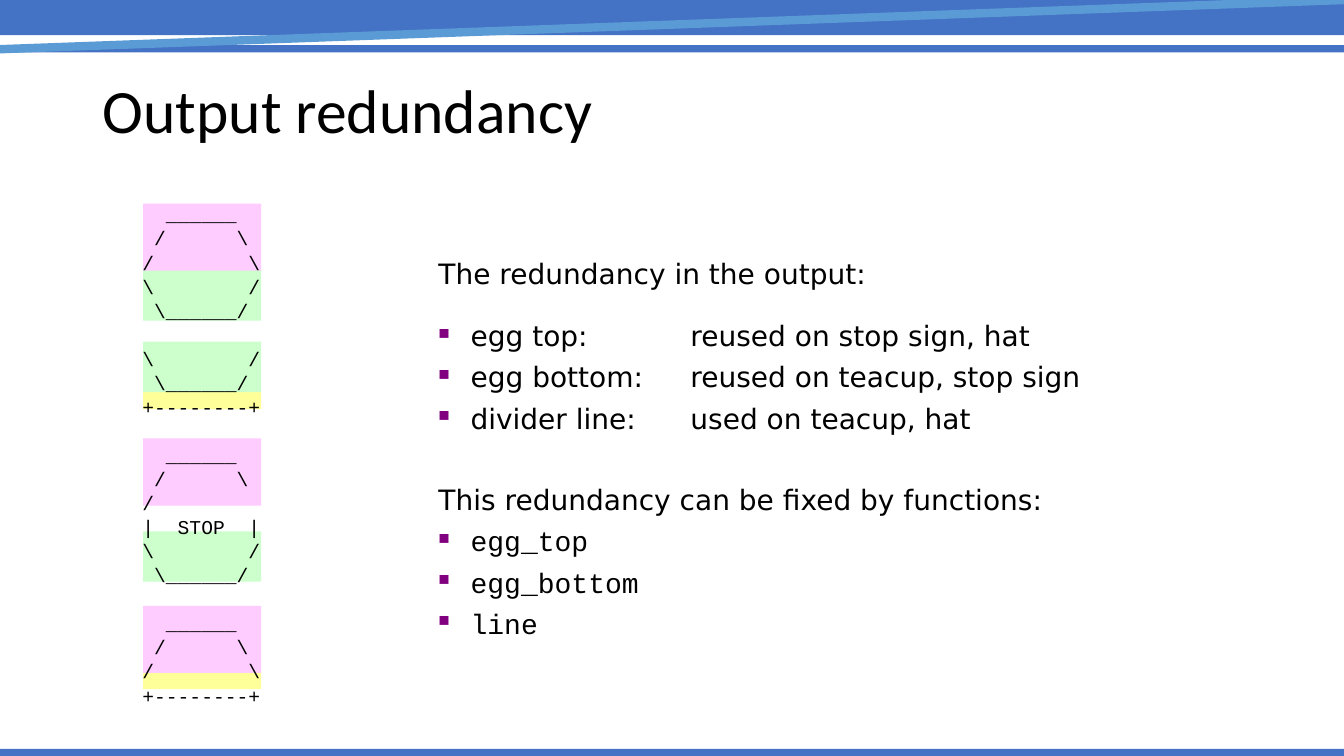
"""Build the slide on output redundancy in ASCII drawings."""
from pptx import Presentation
from pptx.dml.color import RGBColor
from pptx.enum.shapes import MSO_CONNECTOR as Connector, MSO_SHAPE as Shape
from pptx.enum.text import MSO_ANCHOR as Anchor
from pptx.oxml.ns import qn
from pptx.util import Cm, Pt
from lxml.etree import SubElement

COLOURS = {
    "bar": "4472C4", "slash": "5B9BD5", "top": "FFCCFF", "bottom": "CCFFCC",
    "divider": "FFFF99", "text": "000000", "bullet": "800080",
}

deck = Presentation()
deck.slide_width, deck.slide_height = Cm(33.87), Cm(19.05)
page = deck.slides.add_slide(deck.slide_layouts[6])


def add_band(colour, left, top, width, height):
    band = page.shapes.add_shape(Shape.RECTANGLE, Cm(left), Cm(top), Cm(width), Cm(height))
    band.shadow.inherit = False
    band.fill.solid()
    band.fill.fore_color.rgb = RGBColor.from_string(COLOURS[colour])
    band.line.fill.background()


def add_text(lines, left, top, width, height, font, size):
    frame = page.shapes.add_textbox(Cm(left), Cm(top), Cm(width), Cm(height)).text_frame
    frame.word_wrap = True
    frame.text = "\n".join(lines)
    for para in frame.paragraphs:
        para.font.name = font
        para.font.size = Pt(size)
        para.font.color.rgb = RGBColor.from_string(COLOURS["text"])
    return frame


for top, height in [(-0.08, 0.97), (1.14, 0.18), (18.87, 0.18)]:
    add_band("bar", 0, top, 33.87, height)

slash = page.shapes.add_connector(Connector.STRAIGHT, Cm(0), Cm(1.24), Cm(33.87), Cm(0))
slash.line.color.rgb = RGBColor.from_string(COLOURS["slash"])
slash.line.width = Pt(6)
SubElement(slash._element.spPr, qn("a:effectLst"))

bands = [
    ("divider", 0.43, [9.88, 16.94]),
    ("bottom", 1.27, [6.81, 8.61, 13.39]),
    ("top", 1.69, [5.13, 11.05, 15.27]),
]
for colour, height, tops in bands:
    for top in tops:
        add_band(colour, 3.61, top, 2.97, height)

title = add_text(["Output redundancy"], 2.34, 1.02, 29.21, 3.68, "Calibri", 44)
title.vertical_anchor = Anchor.MIDDLE
title.paragraphs[0].line_spacing = 0.9

notes = [
    "The redundancy in the output:",
    "egg top:\treused on stop sign, hat",
    "egg bottom:\treused on teacup, stop sign",
    "divider line:\tused on teacup, hat",
    "This redundancy can be fixed by functions:",
    "egg_top",
    "egg_bottom",
    "line",
]
space_before = {1: 20, 4: 34}
explanation = add_text(notes, 10.8, 6.35, 17.78, 9.8, "DejaVu Sans", 20)
for index, para in enumerate(explanation.paragraphs):
    para.space_before = Pt(space_before.get(index, 5.5))
    if index in (0, 4):
        continue
    if index > 4:
        para.font.name = "Courier New"
    properties = para._p.get_or_add_pPr()
    properties.set("marL", str(Cm(0.81)))
    properties.set("indent", str(Cm(-0.81)))
    bullet_parts = [
        SubElement(properties, qn("a:buClr")),
        SubElement(properties, qn("a:buSzPct"), val="55000"),
        SubElement(properties, qn("a:buChar"), char="■"),
        SubElement(properties, qn("a:tabLst")),
    ]
    SubElement(bullet_parts[0], qn("a:srgbClr"), val=COLOURS["bullet"])
    SubElement(bullet_parts[3], qn("a:tab"), pos=str(Cm(6.35)), algn="l")
    properties.append(properties.find(qn("a:defRPr")))

egg_top = ["  ______", " /      \\", "/        \\"]
egg_bottom = ["\\        /", " \\______/"]
line = ["+--------+"]
drawings = [
    egg_top + egg_bottom,
    egg_bottom + line,
    egg_top[:2] + ["/", "|  STOP  |"] + egg_bottom,
    egg_top + line,
]
rows = [row for drawing in drawings for row in drawing]
art = add_text(rows, 3.34, 5.13, 6, 12.64, "Courier New", 14)
first_rows = [sum(map(len, drawings[:count])) for count in range(1, len(drawings))]
for index, para in enumerate(art.paragraphs):
    para.line_spacing = 0.7
    para.space_before = Pt(22.3 if index in first_rows else 5.5)

deck.save("out.pptx")
